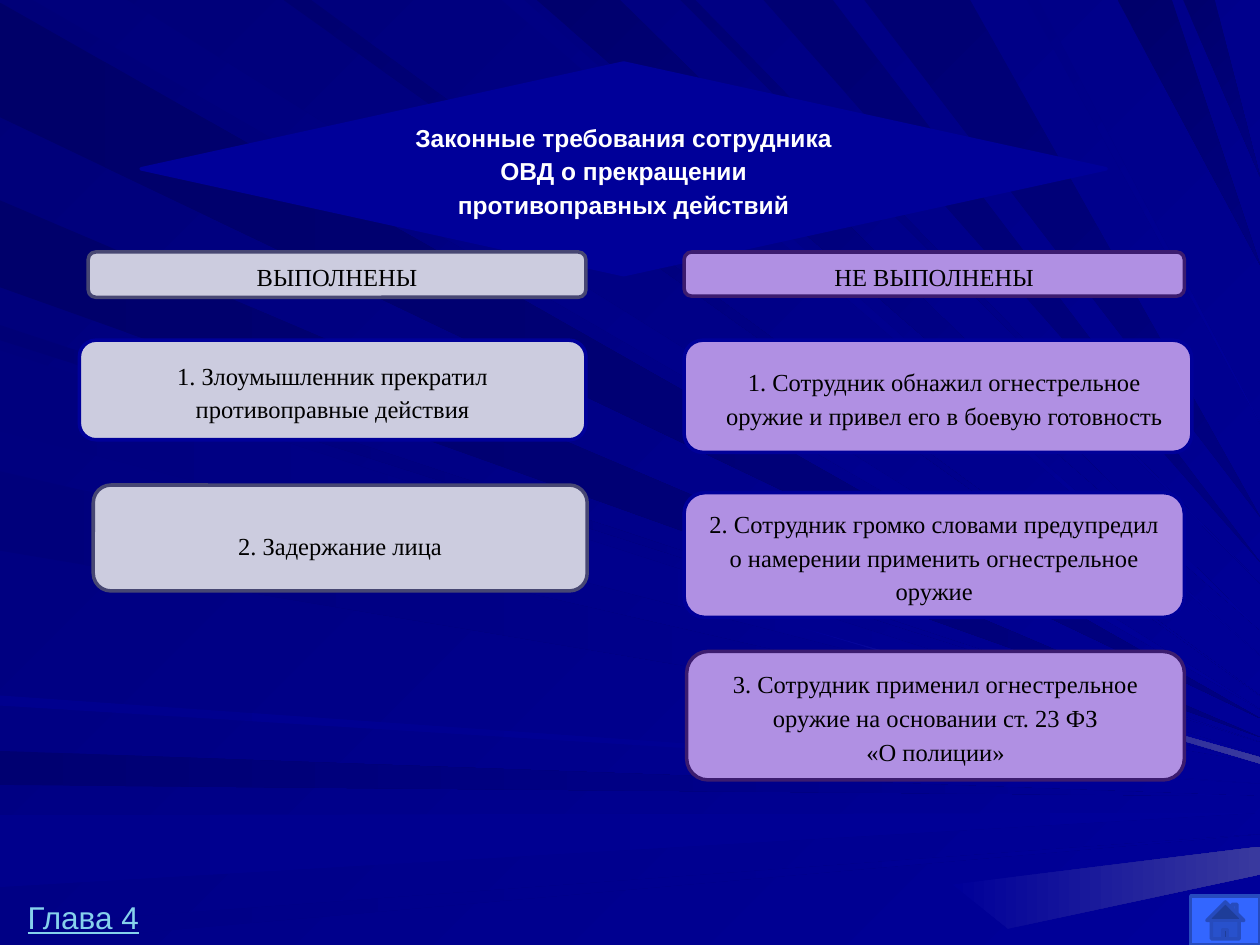
from typing import NamedTuple

from pptx import Presentation
from pptx.dml.color import RGBColor
from pptx.enum.shapes import MSO_SHAPE as Kind
from pptx.enum.text import MSO_ANCHOR as Anchor, MSO_AUTO_SIZE as Auto, PP_ALIGN as Align
from pptx.util import Emu, Pt

PX = 9144  # 100 px to the inch
WIDE, HIGH = 1000, 750

NAVY, DEEP, BLACK, WHITE = "000099", "000080", "000000", "FFFFFF"
GREY, SLATE = "CCCCDF", "474773"
LILAC, PLUM = "B090E3", "3C1C6F"
SERIF, SANS = "Times New Roman", "Arial"


class Ray(NamedTuple):
    """A beam from a span of the top or left edge to a tip on the right edge."""
    near: int
    far: int
    tip: int
    start: str
    end: str = NAVY
    top: bool = True


class Card(NamedTuple):
    """A filled shape with centred text."""
    box: tuple
    text: str
    fill: str
    line: str
    after: int = 0
    left: int = 10
    top: int = 5
    kind: Kind = Kind.ROUNDED_RECTANGLE
    font: str = SERIF
    ink: str = BLACK
    bold: bool = False


RAYS = [
    Ray(2, 93, 570, "000069", DEEP, top=False),
    Ray(26, 101, 563, "00007B"),
    Ray(596, 623, 632, "000071", top=False),
    Ray(647, 704, 645, "00008C", top=False),
    Ray(735, 750, 662, "000085", top=False),
    Ray(258, 270, 589, "000076", top=False),
    Ray(159, 228, 585, "00006B", DEEP, top=False),
    Ray(398, 416, 520, "000083"),
    Ray(426, 492, 500, "00006D"),
    Ray(540, 552, 463, "000073"),
    Ray(606, 661, 446, "000073", DEEP),
    Ray(887, 930, 210, "00006B", DEEP),
    Ray(939, 964, 140, "00006D", DEEP),
    Ray(278, 342, 600, "00007E", top=False),
    Ray(374, 437, 605, "00007B", top=False),
    Ray(552, 560, 622, "00008E", top=False),
    Ray(225, 247, 552, "000070"),
    Ray(686, 770, 410, "000073", DEEP),
    Ray(815, 824, 336, "000085"),
]

# Pale glints at the right edge
GLINTS = [
    [(756, 702), (WIDE, 672), (WIDE, 694), (800, 737)],
    [(635, 498), (WIDE, 601), (WIDE, 606)],
]

CARDS = [
    Card((112, 50, 766, 168), "Законные требования сотрудника ОВД о прекращении противоправных действий",
         NAVY, NAVY, kind=Kind.DIAMOND, font=SANS, ink=WHITE, bold=True),
    # Column heads
    Card((70, 200, 395, 36), "ВЫПОЛНЕНЫ", GREY, SLATE, after=10),
    Card((543, 200, 397, 35), "НЕ ВЫПОЛНЕНЫ", LILAC, PLUM, after=10),
    # Left column
    Card((63, 270, 402, 79), "1. Злоумышленник прекратил противоправные действия", GREY, NAVY),
    Card((74, 385, 392, 84), "2. Задержание лица", GREY, SLATE, top=13),
    # Right column
    Card((543, 270, 403, 89), "1. Сотрудник обнажил огнестрельное оружие и привел его в боевую готовность",
         LILAC, NAVY, left=20),
    Card((543, 391, 397, 99),
         "2. Сотрудник громко словами предупредил о намерении применить огнестрельное оружие",
         LILAC, NAVY),
    Card((545, 517, 395, 102),
         "3. Сотрудник применил огнестрельное оружие на основании ст. 23 ФЗ\n«О полиции»",
         LILAC, PLUM),
]


def px(*nums: int) -> list:
    return [Emu(n * PX) for n in nums]


def rgb(code: str) -> RGBColor:
    return RGBColor.from_string(code)


def paint(fill, start: str, end: str, turn: int = 0) -> None:
    """Fill solid, or as a gradient turned clockwise."""
    if start == end:
        fill.solid()
        fill.fore_color.rgb = rgb(start)
        return
    fill.gradient()
    fill.gradient_angle = (360 - turn) % 360
    for stop, code in zip(fill.gradient_stops, (start, end)):
        stop.color.rgb = rgb(code)


def add_path(slide, pts: list, start: str, end: str, turn: int = 0) -> None:
    path = slide.shapes.build_freeform(*pts[0], scale=PX)
    path.add_line_segments(pts[1:], close=True)
    shape = path.convert_to_shape()
    shape.shadow.inherit = False
    shape.line.fill.background()
    paint(shape.fill, start, end, turn)


def add_ray(slide, ray: Ray) -> None:
    base = [(n, 0) if ray.top else (0, n) for n in (ray.near, ray.far)]
    add_path(slide, base + [(WIDE, ray.tip)], ray.start, ray.end, 45 if ray.top else 0)


def add_box(slide, kind: Kind, box: tuple, fill: str, line: str):
    shape = slide.shapes.add_shape(kind, *px(*box))
    shape.shadow.inherit = False
    paint(shape.fill, fill, fill)
    shape.line.color.rgb = rgb(line)
    shape.line.width = Pt(2)
    return shape


def add_run(para, text: str, font: str, size: int, ink: str, bold: bool = False, under: bool = False) -> None:
    run = para.add_run()
    run.text = text
    run.font.name, run.font.size = font, Pt(size)
    run.font.bold, run.font.underline = bold, under
    run.font.color.rgb = rgb(ink)


def add_card(slide, card: Card) -> None:
    frame = add_box(slide, card.kind, card.box, card.fill, card.line).text_frame
    frame.word_wrap = True
    frame.vertical_anchor = Anchor.MIDDLE
    frame.margin_left, frame.margin_top = px(card.left, card.top)
    frame.margin_right, frame.margin_bottom = px(10, 5)
    para = frame.paragraphs[0]
    para.alignment = Align.CENTER
    para.line_spacing = 1.15
    para.space_after = Pt(card.after)
    for num, part in enumerate(card.text.split("\n")):
        if num:
            para.add_line_break()
        add_run(para, part, card.font, 14, card.ink, card.bold)


def main() -> None:
    deck = Presentation()
    deck.slide_width, deck.slide_height = px(WIDE, HIGH)
    slide = deck.slides.add_slide(deck.slide_layouts[6])

    # Backdrop
    paint(slide.background.fill, "000078", NAVY, 45)
    for ray in RAYS:
        add_ray(slide, ray)
    for pts in GLINTS:
        add_path(slide, pts, NAVY, "39399E")

    # Home button and scheme
    add_box(slide, Kind.ACTION_BUTTON_HOME, (945, 711, 55, 39), "3366FF", "264BBD")
    for card in CARDS:
        add_card(slide, card)

    # Chapter label
    frame = slide.shapes.add_textbox(*px(12, 708, 109, 40)).text_frame
    frame.word_wrap = False
    frame.auto_size = Auto.SHAPE_TO_FIT_TEXT
    add_run(frame.paragraphs[0], "Глава 4", SANS, 18, "86D1EC", under=True)

    deck.save("out.pptx")


if __name__ == "__main__":
    main()
